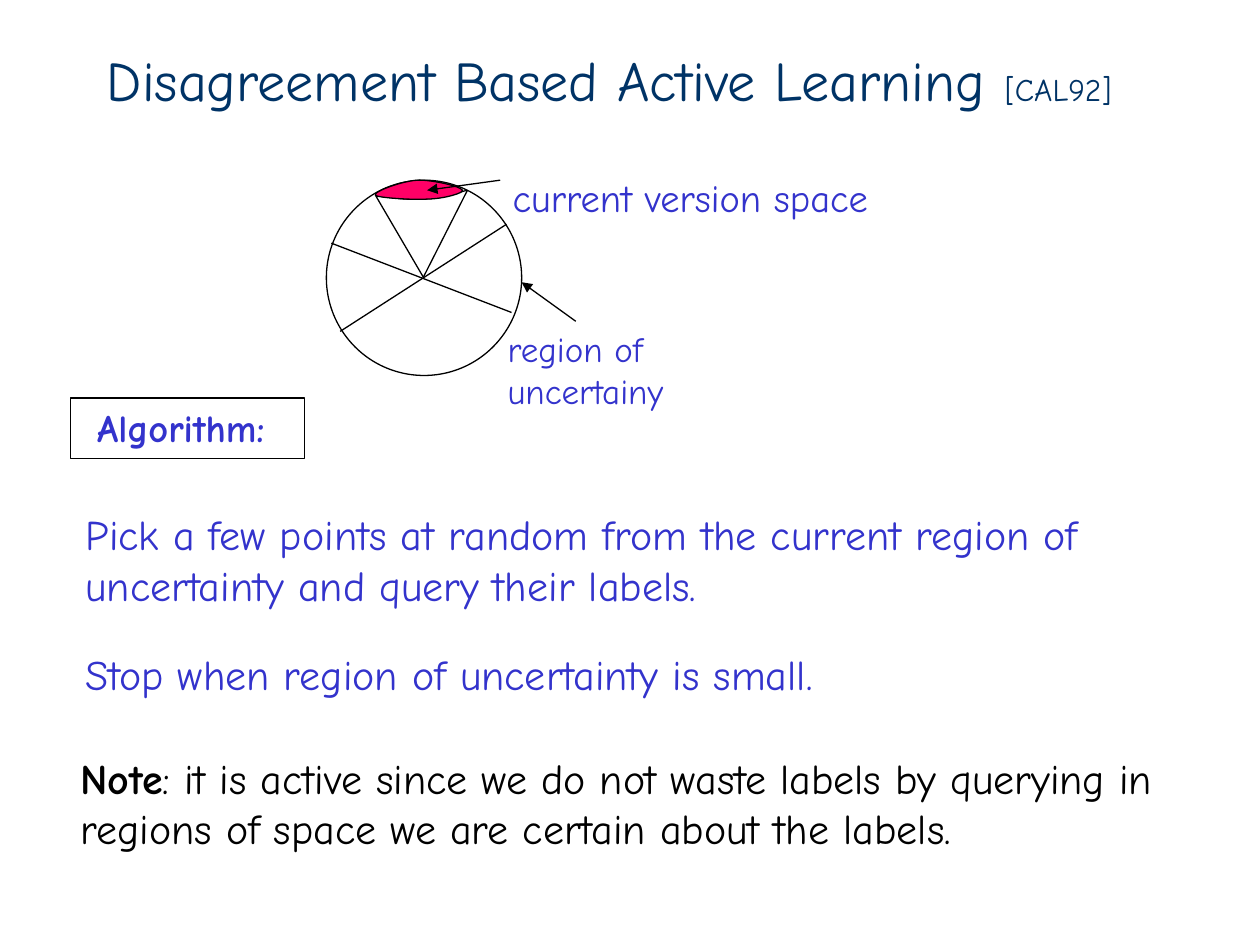
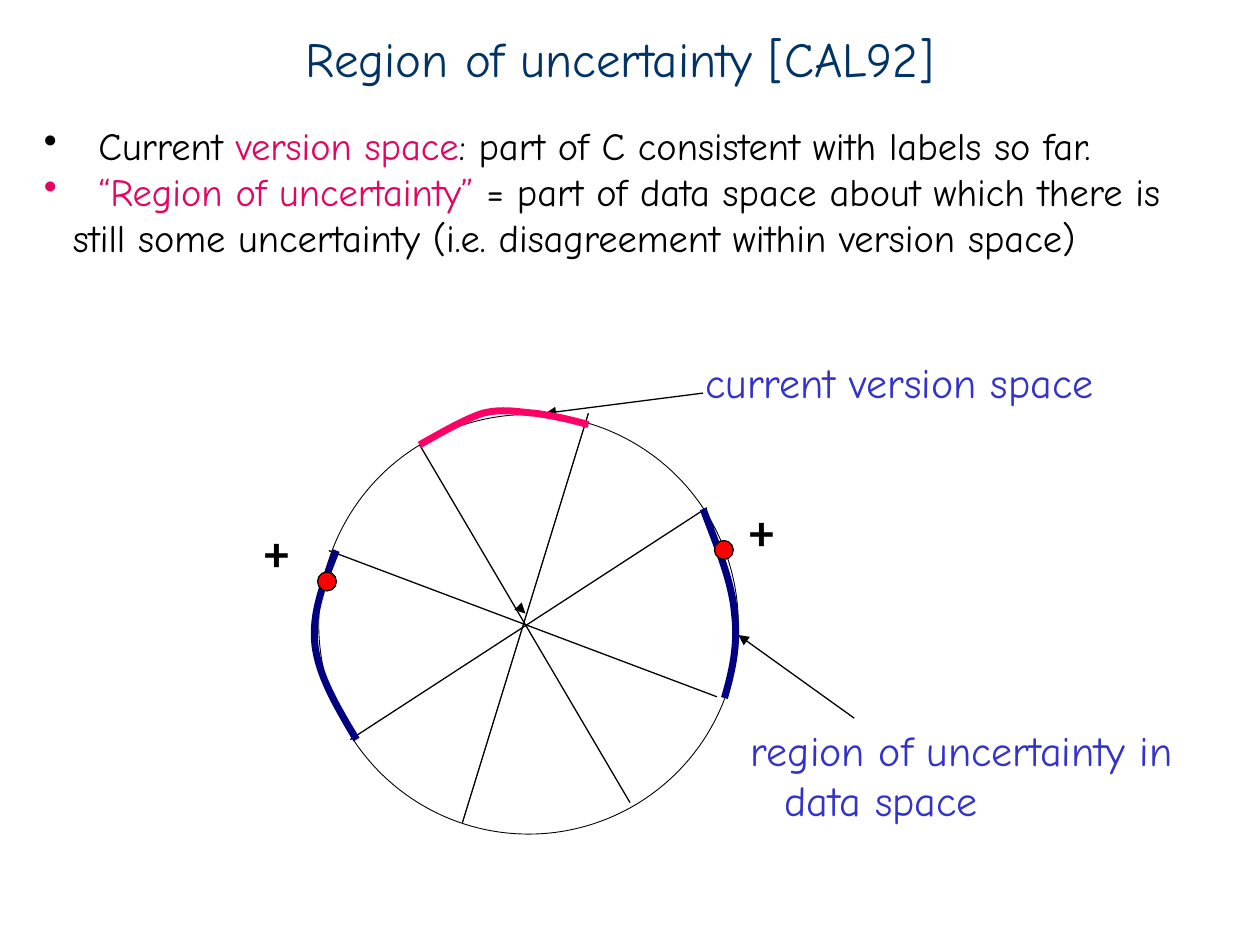
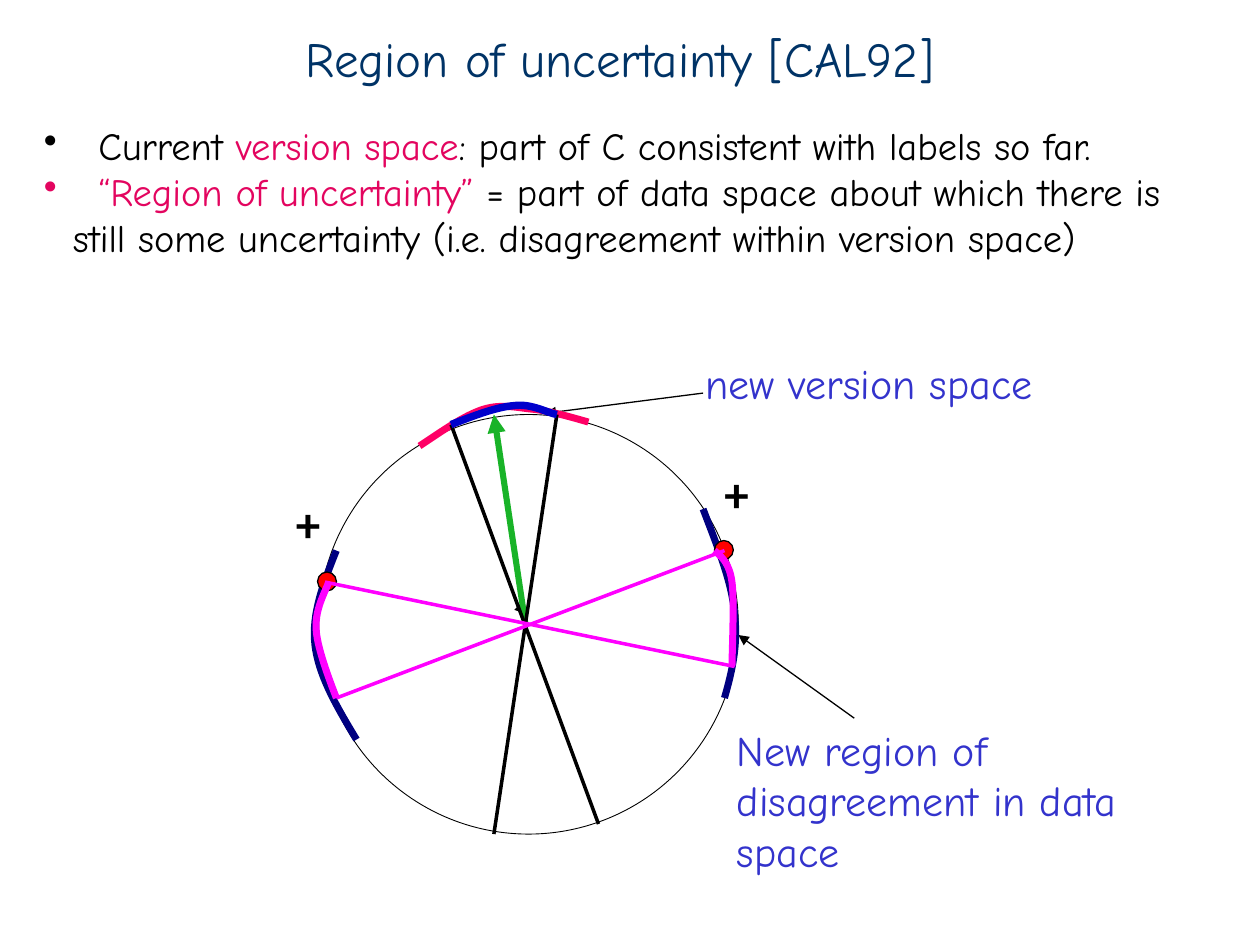
from lxml import etree
from pptx import Presentation
from pptx.dml.color import RGBColor
from pptx.enum.shapes import MSO_CONNECTOR, MSO_SHAPE
from pptx.enum.text import MSO_ANCHOR, MSO_AUTO_SIZE, PP_ALIGN
from pptx.oxml.ns import qn
from pptx.util import Pt

PX = 9144  # EMU per px, 100 px to the inch

NAVY = RGBColor(0x00, 0x33, 0x66)
INDIGO = RGBColor(0x33, 0x33, 0xCC)
BLACK = RGBColor(0x00, 0x00, 0x00)
CRIMSON = RGBColor(0xE3, 0x05, 0x5F)
PINK = RGBColor(0xFF, 0x00, 0x66)
DARK_BLUE = RGBColor(0x00, 0x00, 0x80)
BLUE = RGBColor(0x00, 0x00, 0xCC)
RED = RGBColor(0xFF, 0x00, 0x00)
GREEN = RGBColor(0x19, 0xB3, 0x28)
MAGENTA = RGBColor(0xFF, 0x00, 0xFF)

FONT = "Comic Neue"
PLUS_FONT = "Calibri"
CENTER = PP_ALIGN.CENTER
TOP = MSO_ANCHOR.TOP
MIDDLE = MSO_ANCHOR.MIDDLE
NO_AUTOFIT = MSO_AUTO_SIZE.NONE
STRAIGHT = MSO_CONNECTOR.STRAIGHT
OVAL = MSO_SHAPE.OVAL
RECTANGLE = MSO_SHAPE.RECTANGLE

HANGING = 38


def px(*lengths):
    return [v * PX for v in lengths]


def write(tf, *paragraphs, size=24, color=INDIGO, font=FONT, bold=False,
          align=None, hanging=0, bullet=None, wrap=True):
    """Fill a frame; a paragraph is a string or a list of (text, color, size, bold),
    of which the last parts may be left out."""
    tf.word_wrap = wrap
    tf.auto_size = NO_AUTOFIT
    for i, runs in enumerate(paragraphs):
        p = tf.add_paragraph() if i else tf.paragraphs[0]
        p.alignment = align
        pPr = p._p.get_or_add_pPr()
        if hanging:
            pPr.set("marL", str(hanging * PX))
            pPr.set("indent", str(-hanging * PX))
        if bullet:
            etree.SubElement(pPr, qn("a:buFontTx"))
            etree.SubElement(pPr, qn("a:buChar")).set("char", bullet)
        for run in [(runs,)] if isinstance(runs, str) else runs:
            defaults = (None, color, size, bold)
            text, run_color, run_size, run_bold = run + defaults[len(run):]
            r = p.add_run()
            r.text = text
            r.font.name = font
            r.font.size = Pt(run_size)
            r.font.bold = run_bold
            r.font.color.rgb = run_color


def add_text(s, box, *paragraphs, **fmt):
    write(s.shapes.add_textbox(*px(*box)).text_frame, *paragraphs, **fmt)


def add_titled_slide(prs, box, *runs, size):
    s = prs.slides.add_slide(prs.slide_layouts[5])
    title = s.shapes.title
    title.left, title.top, title.width, title.height = px(*box)
    title.text_frame.vertical_anchor = MIDDLE
    write(title.text_frame, list(runs), size=size, color=NAVY, align=CENTER)
    return s


def style(sp, fill, color, width):
    sp.shadow.inherit = False
    if fill is None:
        sp.fill.background()
    else:
        sp.fill.solid()
        sp.fill.fore_color.rgb = fill
    sp.line.color.rgb = color
    sp.line.width = Pt(width)


def add_outline(s, kind, box, fill=None, width=0.75):
    sp = s.shapes.add_shape(kind, *px(*box))
    style(sp, fill, BLACK, width)
    return sp


def add_line(s, start, end, color=BLACK, width=0.75, arrow=False):
    line = s.shapes.add_connector(STRAIGHT, *px(*start, *end))
    line.line.color.rgb = color
    line.line.width = Pt(width)
    if arrow:
        etree.SubElement(line.line._get_or_add_ln(), qn("a:tailEnd")).set("type", "triangle")
    etree.SubElement(line._element.spPr, qn("a:effectLst"))


def add_curve(s, points, color=BLACK, width=0.75, fill=None, closed=False):
    """Draw joined cubic curves: a start, then two controls and an end for each."""
    builder = s.shapes.build_freeform(*px(*points[0]))
    builder.add_line_segments([px(*pt) for pt in points[1:]], close=closed)
    sp = builder.convert_to_shape()
    segments = list(sp._element.iter(qn("a:lnTo")))
    for i in range(0, len(segments), 3):
        cubic = etree.Element(qn("a:cubicBezTo"))
        segments[i].addprevious(cubic)
        for segment in segments[i:i + 3]:
            cubic.append(segment[0])
            segment.getparent().remove(segment)
    style(sp, fill, color, width)


def add_plus(s, x, y):
    add_text(s, (x, y, 40, 57), "+", size=28, color=BLACK, font=PLUS_FONT,
             bold=True, wrap=False)


def add_region_slide(prs, version_arc, diameters=()):
    """Slide with the definitions and the circle with its labelled region."""
    s = add_titled_slide(prs, (42, 17, 900, 58), ("Region of uncertainty [CAL92]",), size=28)
    add_text(s, (25, 92, 933, 157),
             [("  Current ",), ("version space", CRIMSON),
              (": part of C consistent with labels so far.",)],
             [("  “Region of uncertainty”", CRIMSON),
              (" = part of data space about which there is still some uncertainty "
               "(i.e. disagreement within version space)",)],
             size=22, color=BLACK, hanging=23, bullet="•")
    add_outline(s, OVAL, (253, 329, 333, 333), width=0.5)
    for start, end in diameters:
        add_line(s, start, end)
    add_line(s, (678, 570), (586, 504), arrow=True)
    add_line(s, (558, 312), (433, 328), arrow=True)
    add_curve(s, version_arc, PINK, 4)
    for region_arc in (
        [(267, 437), (257, 462), (247, 487), (250, 512), (253, 537), (268, 562), (283, 587)],
        [(558, 404), (569, 433), (581, 462), (583, 487), (586, 512), (581, 533), (575, 554)],
    ):
        add_curve(s, region_arc, DARK_BLUE, 4)
    add_line(s, (416, 486), (417, 487), arrow=True)
    return s


def add_labelled_points(s):
    for x, y in ((252, 454), (567, 429)):
        add_outline(s, OVAL, (x, y, 15, 15), fill=RED)


def build_algorithm_slide(prs):
    s = add_titled_slide(prs, (-8, 17, 983, 92),
                         ("Disagreement Based Active Learning ",),
                         ("[CAL92]", NAVY, 18), size=32)
    add_text(s, (58, 399, 808, 90),
             "Pick a few points at random from the current region of uncertainty "
             "and query their labels.")
    add_outline(s, OVAL, (259, 143, 155, 155))
    hub = (336, 220)
    for rim in ((298, 155), (371, 151)):
        add_line(s, hub, rim)
    add_curve(s, [(298, 155), (311, 157), (324, 159), (336, 158), (349, 158), (366, 152),
                  (371, 151)])
    add_curve(s, [(298, 155), (299, 157), (329, 159), (340, 158), (352, 158), (369, 153),
                  (367, 151), (366, 148), (344, 143), (333, 143), (321, 143), (296, 152),
                  (298, 155)], fill=PINK, closed=True)
    add_text(s, (397, 133, 328, 47), "current version space", size=22)
    add_line(s, (402, 178), (270, 263))
    add_line(s, (263, 193), (406, 248))
    add_text(s, (393, 255, 164, 77), "region of uncertainy", size=20)
    add_line(s, (457, 255), (414, 224), arrow=True)
    add_line(s, (397, 143), (339, 151), arrow=True)

    heading = add_outline(s, RECTANGLE, (56, 316, 186, 48))
    heading.text_frame.vertical_anchor = TOP
    write(heading.text_frame, "Algorithm: ", size=22, bold=True, align=CENTER)
    add_text(s, (54, 592, 917, 91),
             [("Note", BLACK, 24, True),
              (": it is active since we do not waste labels by querying in regions of "
               "space we are certain about the labels.",)], color=BLACK)
    add_text(s, (58, 510, 808, 50), "Stop when region of uncertainty is small.")


def build_current_region_slide(prs):
    s = add_region_slide(
        prs,
        [(333, 353), (351, 343), (368, 333), (383, 328), (399, 324), (411, 327),
         (425, 328), (439, 330), (453, 333), (467, 337)],
        diameters=[((561, 403), (278, 587)), ((261, 437), (569, 553)),
                   ((333, 353), (500, 637)), ((367, 653), (467, 328))])
    add_labelled_points(s)
    add_text(s, (550, 278, 355, 50), "current version space", hanging=HANGING)
    add_text(s, (575, 570, 367, 90), " region of uncertainty in data space", hanging=HANGING)
    add_plus(s, 585, 393)
    add_plus(s, 200, 410)


def build_new_region_slide(prs):
    s = add_region_slide(
        prs,
        [(333, 354), (351, 342), (368, 330), (383, 325), (399, 320), (411, 324),
         (425, 325), (439, 327), (453, 331), (467, 335)])
    add_text(s, (550, 279, 296, 50), "new version space")
    add_text(s, (575, 570, 325, 131), "New region of disagreement in data space")
    add_plus(s, 565, 363)
    add_plus(s, 225, 387)
    add_line(s, (417, 495), (392, 329), GREEN, 3.5, arrow=True)
    add_labelled_points(s)
    add_line(s, (442, 329), (392, 662), width=2)
    add_line(s, (358, 337), (475, 654), width=2)
    add_curve(s, [(358, 337), (376, 330), (394, 323), (408, 322), (422, 320), (435, 328),
                  (442, 329)], BLUE, 4.25)
    add_line(s, (575, 437), (267, 554), MAGENTA, 2)
    add_line(s, (258, 462), (583, 529), MAGENTA, 2)
    for new_region_arc in (
        [(261, 462), (256, 474), (250, 485), (251, 500), (252, 516), (264, 546), (267, 554)],
        [(567, 437), (573, 442), (579, 447), (581, 462), (583, 477), (581, 518), (581, 529)],
    ):
        add_curve(s, new_region_arc, MAGENTA, 4)


def main():
    prs = Presentation()
    prs.slide_width, prs.slide_height = px(1000, 750)
    build_algorithm_slide(prs)
    build_current_region_slide(prs)
    build_new_region_slide(prs)
    prs.save("out.pptx")


if __name__ == "__main__":
    main()
